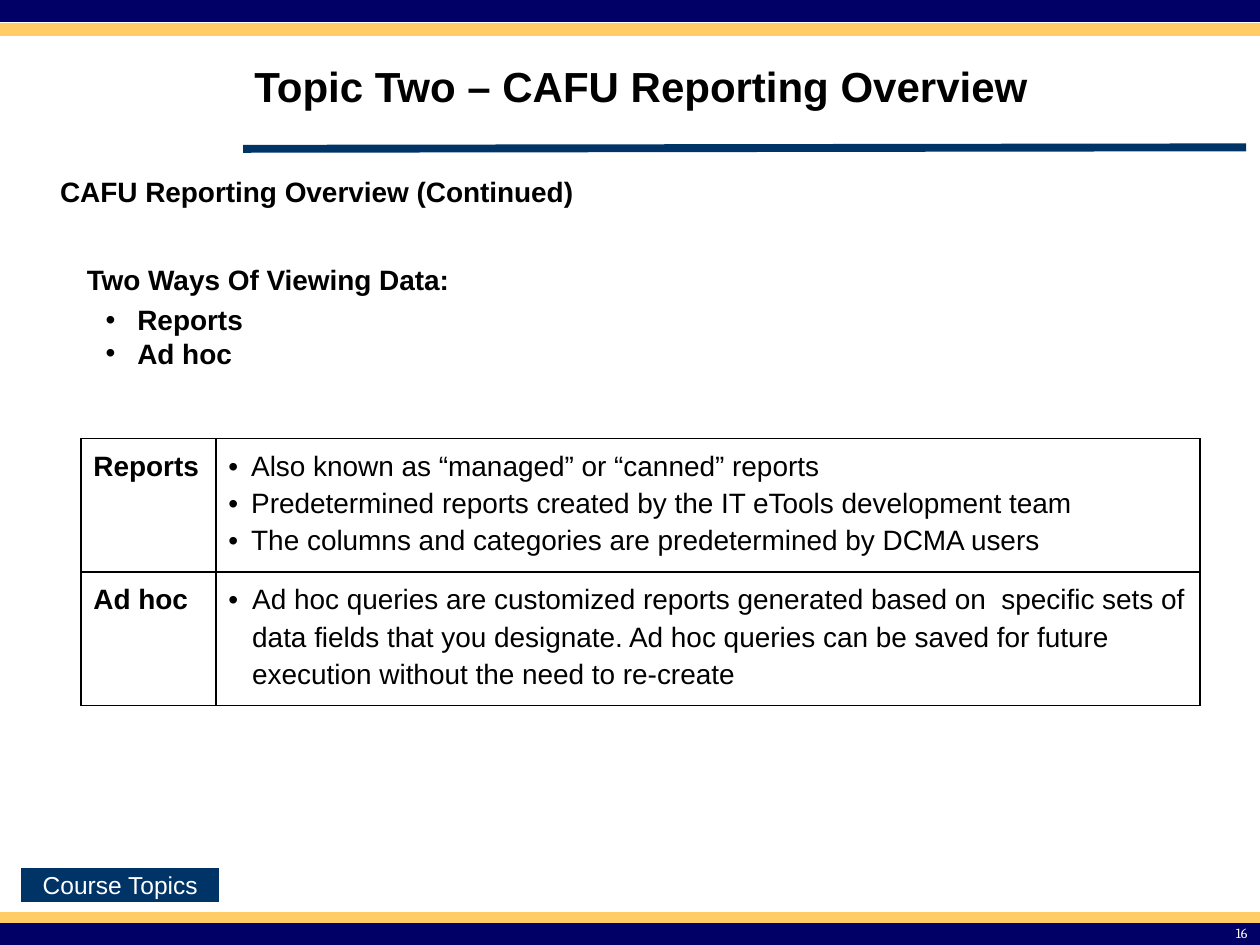
"""Build the CAFU reporting overview slide."""
from dataclasses import dataclass

from lxml.etree import SubElement
from pptx import Presentation
from pptx.dml.color import RGBColor
from pptx.enum.shapes import MSO_CONNECTOR, MSO_SHAPE
from pptx.enum.text import MSO_ANCHOR, PP_ALIGN
from pptx.oxml.ns import qn
from pptx.slide import Slide
from pptx.table import _Cell
from pptx.text.text import TextFrame, _Paragraph
from pptx.util import Cm, Pt


@dataclass(frozen=True)
class Theme:
    navy: str = "000066"
    gold: str = "FFCC66"
    blue: str = "003366"
    black: str = "000000"
    white: str = "FFFFFF"
    sans: str = "Arial"
    serif: str = "Cambria"
    title: float = 24
    body: float = 16
    button: float = 14
    number: float = 8
    band_line: float = 0.75
    rule_line: float = 4.5
    cell_line: float = 1


THEME = Theme()


@dataclass(frozen=True)
class Box:
    left: float
    top: float
    width: float
    height: float

    def lengths(self) -> tuple[Cm, Cm, Cm, Cm]:
        return Cm(self.left), Cm(self.top), Cm(self.width), Cm(self.height)


@dataclass(frozen=True)
class Style:
    size: float = THEME.body
    color: str = THEME.black
    font: str = THEME.sans
    bold: bool = True
    align: PP_ALIGN = PP_ALIGN.LEFT
    spacing: float = 1.0
    indent: float = 0


@dataclass(frozen=True)
class Band:
    top: float
    height: float
    color: str


@dataclass(frozen=True)
class Label:
    box: Box
    lines: tuple[str, ...]
    style: Style = Style()
    anchor: MSO_ANCHOR = MSO_ANCHOR.TOP
    wrap: bool = True


@dataclass(frozen=True)
class View:
    name: str
    points: tuple[str, ...]
    indent: float


BANDS = (
    Band(0.48, 0.23, THEME.gold),
    Band(0, 0.43, THEME.navy),
    Band(18.39, 0.2, THEME.gold),
    Band(18.62, 0.43, THEME.navy),
)
LABELS = (
    Label(Box(4.88, 0.76, 19.61, 1.93), ("Topic Two – CAFU Reporting Overview",),
          Style(size=THEME.title), MSO_ANCHOR.MIDDLE),
    Label(Box(0.94, 3.4, 10.9, 0.94), ("CAFU Reporting Overview (Continued)",),
          Style(align=PP_ALIGN.CENTER), wrap=False),
    Label(Box(1.5, 5.16, 20.22, 0.94), ("Two Ways Of Viewing Data:",)),
    Label(Box(1.88, 5.98, 8.61, 1.6), ("Reports", "Ad hoc"), Style(indent=0.64)),
    Label(Box(19.48, 18.52, 5.92, 0.53), ("16",),
          Style(THEME.number, THEME.white, THEME.serif, False, PP_ALIGN.RIGHT)),
)
VIEWS = (
    View("Reports", (
        "Also known as “managed” or “canned” reports",
        "Predetermined reports created by the IT eTools development team",
        "The columns and categories are predetermined by DCMA users",
    ), 0.46),
    View("Ad hoc", (
        "Ad hoc queries are customized reports generated based on  specific sets of "
        "data fields that you designate. Ad hoc queries can be saved for future "
        "execution without the need to re-create",
    ), 0.48),
)
VIEW_COLUMNS = (2.72, 19.84)
VIEW_ROW = 2.69


def add_bullet(paragraph: _Paragraph, indent: float) -> None:
    properties = paragraph._p.get_or_add_pPr()
    properties.set("marL", str(Cm(indent)))
    properties.set("indent", str(-Cm(indent)))
    SubElement(properties, qn("a:buFont"), typeface=THEME.sans)
    SubElement(properties, qn("a:buChar"), char="•")


def write(frame: TextFrame, lines: tuple[str, ...], style: Style) -> None:
    for index, line in enumerate(lines):
        paragraph = frame.add_paragraph() if index else frame.paragraphs[0]
        if style.indent:
            add_bullet(paragraph, style.indent)
        paragraph.alignment = style.align
        paragraph.line_spacing = style.spacing
        run = paragraph.add_run()
        run.text = line
        run.font.name = style.font
        run.font.size = Pt(style.size)
        run.font.bold = style.bold
        run.font.color.rgb = RGBColor.from_string(style.color)


def draw_band(slide: Slide, band: Band) -> None:
    strip = slide.shapes.add_shape(
        MSO_SHAPE.RECTANGLE, *Box(0, band.top, 25.4, band.height).lengths())
    strip.shadow.inherit = False
    strip.fill.solid()
    strip.fill.fore_color.rgb = RGBColor.from_string(band.color)
    strip.line.color.rgb = RGBColor.from_string(band.color)
    strip.line.width = Pt(THEME.band_line)


def draw_rule(slide: Slide) -> None:
    rule = slide.shapes.add_connector(
        MSO_CONNECTOR.STRAIGHT, Cm(4.9), Cm(3), Cm(25.12), Cm(2.97))
    rule.line.color.rgb = RGBColor.from_string(THEME.blue)
    rule.line.width = Pt(THEME.rule_line)
    SubElement(rule._element.spPr, qn("a:effectLst"))


def draw_button(slide: Slide) -> None:
    button = slide.shapes.add_shape(
        MSO_SHAPE.ACTION_BUTTON_CUSTOM, *Box(0.43, 17.5, 3.99, 0.69).lengths())
    button.shadow.inherit = False
    button.fill.solid()
    button.fill.fore_color.rgb = RGBColor.from_string(THEME.blue)
    button.line.fill.background()
    button.text_frame.word_wrap = False
    button.text_frame.vertical_anchor = MSO_ANCHOR.MIDDLE
    write(button.text_frame, ("Course Topics",),
          Style(THEME.button, THEME.white, bold=False, align=PP_ALIGN.CENTER))


def draw_label(slide: Slide, label: Label) -> None:
    frame = slide.shapes.add_textbox(*label.box.lengths()).text_frame
    frame.word_wrap = label.wrap
    frame.vertical_anchor = label.anchor
    write(frame, label.lines, label.style)


def fill_cell(cell: _Cell, lines: tuple[str, ...], style: Style) -> None:
    properties = cell._tc.get_or_add_tcPr()
    for side in ("a:lnL", "a:lnR", "a:lnT", "a:lnB"):
        border = SubElement(properties, qn(side), w=str(Pt(THEME.cell_line)))
        SubElement(SubElement(border, qn("a:solidFill")), qn("a:srgbClr"), val=THEME.black)
    cell.fill.background()
    write(cell.text_frame, lines, style)


def draw_views(slide: Slide) -> None:
    box = Box(1.63, 8.84, sum(VIEW_COLUMNS), VIEW_ROW * len(VIEWS))
    table = slide.shapes.add_table(len(VIEWS), len(VIEW_COLUMNS), *box.lengths()).table
    table.first_row = False
    table.horz_banding = False
    for column, width in zip(table.columns, VIEW_COLUMNS):
        column.width = Cm(width)
    for row, view in zip(table.rows, VIEWS):
        row.height = Cm(VIEW_ROW)
        fill_cell(row.cells[0], (view.name,), Style(spacing=1.2))
        fill_cell(row.cells[1], view.points,
                  Style(bold=False, spacing=1.2, indent=view.indent))


def main() -> None:
    deck = Presentation()
    deck.slide_width, deck.slide_height = Cm(25.4), Cm(19.05)
    slide = deck.slides.add_slide(deck.slide_layouts[6])
    draw_rule(slide)
    for band in BANDS:
        draw_band(slide, band)
    draw_button(slide)
    for label in LABELS:
        draw_label(slide, label)
    draw_views(slide)
    deck.save("out.pptx")


if __name__ == "__main__":
    main()
